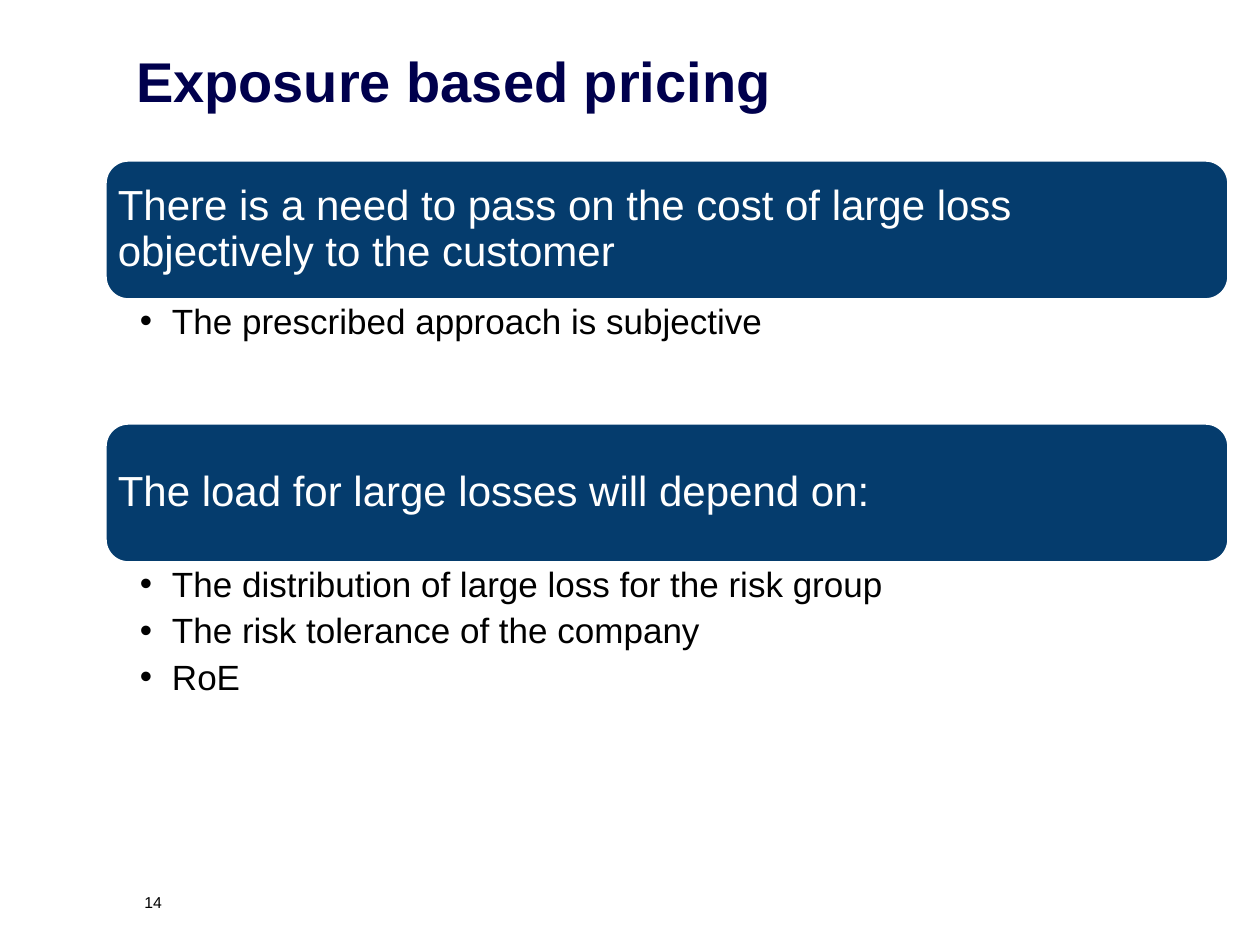
from lxml import etree
from pptx import Presentation
from pptx.dml.color import RGBColor
from pptx.enum.shapes import MSO_SHAPE
from pptx.enum.text import MSO_ANCHOR, PP_ALIGN
from pptx.oxml.ns import qn
from pptx.util import Emu, Pt

ROUNDED = MSO_SHAPE.ROUNDED_RECTANGLE
TOP, MIDDLE, BOTTOM = MSO_ANCHOR.TOP, MSO_ANCHOR.MIDDLE, MSO_ANCHOR.BOTTOM
LEFT, RIGHT = PP_ALIGN.LEFT, PP_ALIGN.RIGHT

PX_PER_INCH = 126
COLORS = {"title": "00004D", "banner": "053C6D", "white": "FFFFFF", "black": "000000"}
BANNER_H = 140
SECTIONS = [
    ("There is a need to pass on the cost of large loss objectively to the customer",
     ["The prescribed approach is subjective"]),
    ("The load for large losses will depend on:",
     ["The distribution of large loss for the risk group",
      "The risk tolerance of the company",
      "RoE"]),
]


def px(n):
    return Emu(round(n * 914400 / PX_PER_INCH))


def rgb(name):
    return RGBColor.from_string(COLORS[name])


def add_bullet(p, indent):
    pPr = p._p.get_or_add_pPr()
    pPr.set("marL", str(px(indent)))
    pPr.set("indent", str(-px(indent)))
    etree.SubElement(pPr, qn("a:buFont"), typeface="Arial")
    etree.SubElement(pPr, qn("a:buChar"), char="•")


def write(sp, lines, size, color, bold=False, align=LEFT, anchor=TOP,
          insets=(0, 0, 0, 0), wrap=True, bullet_indent=0, spacing=None, after=0):
    """Fill a shape with one paragraph per line; insets are left, top, right, bottom."""
    tf = sp.text_frame
    tf.word_wrap = wrap
    tf.vertical_anchor = anchor
    tf.margin_left, tf.margin_top, tf.margin_right, tf.margin_bottom = map(px, insets)
    for i, line in enumerate(lines):
        p = tf.add_paragraph() if i else tf.paragraphs[0]
        if bullet_indent:
            add_bullet(p, bullet_indent)
        p.alignment = align
        p.line_spacing = spacing
        p.space_after = Pt(after)
        r = p.add_run()
        r.text = line
        r.font.name = "Arial"
        r.font.size = Pt(size)
        r.font.bold = bold
        r.font.color.rgb = rgb(color)


def place_title(slide, x, y, w, h):
    sp = slide.shapes.title
    sp.left, sp.top, sp.width, sp.height = map(px, (x, y, w, h))
    write(sp, ["Exposure based pricing"], 32, "title", bold=True, anchor=BOTTOM,
          insets=(13, 6, 13, 6))


def add_section(slide, x, y, w, h, heading, points):
    """Banner with a heading, and its bullet points in the rest of the box."""
    sp = slide.shapes.add_shape(ROUNDED, px(x), px(y), px(w), px(BANNER_H))
    sp.shadow.inherit = False
    sp.fill.solid()
    sp.fill.fore_color.rgb = rgb("banner")
    sp.line.color.rgb = rgb("white")
    sp.line.width = Pt(2)
    write(sp, [heading], 24, "white", anchor=MIDDLE, insets=(6, 6, 6, 6), spacing=0.9)

    body = slide.shapes.add_textbox(px(x), px(y + BANNER_H), px(w), px(h - BANNER_H))
    write(body, points, 20, "black", insets=(35, 4, 20, 4), bullet_indent=32,
          spacing=0.9, after=5)


def add_page_number(slide, x, y, w, h):
    sp = slide.shapes.add_textbox(px(x), px(y), px(w), px(h))
    write(sp, ["14"], 9, "black", align=RIGHT, wrap=False)


def main():
    prs = Presentation()
    prs.slide_width, prs.slide_height = px(1260), px(945)
    slide = prs.slides.add_slide(prs.slide_layouts[5])
    place_title(slide, 123, 25, 1084, 95)
    top = 160
    for (heading, points), h in zip(SECTIONS, (263, 278)):
        add_section(slide, 105, top, 1124, h, heading, points)
        top += h
    add_page_number(slide, 136, 893, 26, 19)
    prs.save("out.pptx")


if __name__ == "__main__":
    main()
